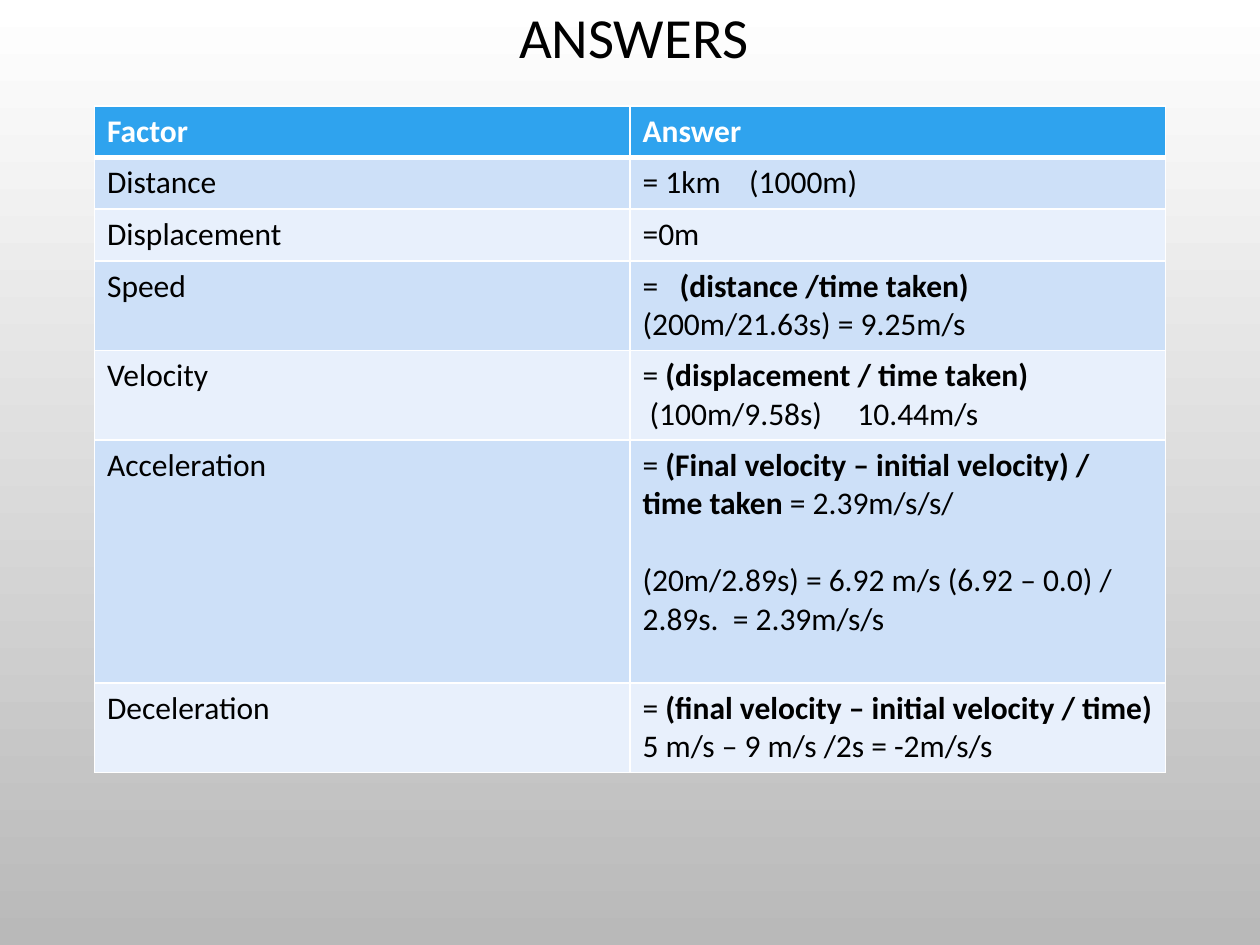
from lxml import etree
from pptx import Presentation
from pptx.dml.color import RGBColor
from pptx.enum.text import MSO_ANCHOR, MSO_AUTO_SIZE, PP_ALIGN
from pptx.oxml.ns import qn
from pptx.util import Inches, Pt

COLORS = {"black": "000000", "white": "FFFFFF", "grey": "B9B9B9",
          "header": "2FA3EE", "odd": "CDE0F8", "even": "E8F0FC"}
FONT = "Calibri"


def style_run(r, size, color, bold=False):
    r.font.name = FONT
    r.font.size = Pt(size)
    r.font.bold = bold
    r.font.color.rgb = RGBColor.from_string(COLORS[color])


def add_border(cell, side, width):
    ln = etree.SubElement(cell._tc.get_or_add_tcPr(), qn(f"a:ln{side}"), w=str(Pt(width)))
    fill = etree.SubElement(ln, qn("a:solidFill"))
    etree.SubElement(fill, qn("a:srgbClr"), val=COLORS["white"])


prs = Presentation()
prs.slide_width, prs.slide_height = Inches(10), Inches(7.5)
s = prs.slides.add_slide(prs.slide_layouts[5])

bg = s.background.fill
bg.gradient()
bg.gradient_angle = 270
for stop, color, position in zip(bg.gradient_stops, ("white", "grey"), (0, 1)):
    stop.color.rgb = RGBColor.from_string(COLORS[color])
    stop.position = position

title = s.shapes.title
title.left, title.top, title.width, title.height = Inches(0.83), Inches(0), Inches(8.5), Inches(0.63)
tf = title.text_frame
tf.text = "ANSWERS "
tf.auto_size = MSO_AUTO_SIZE.NONE
tf.vertical_anchor = MSO_ANCHOR.MIDDLE
p = tf.paragraphs[0]
p.alignment = PP_ALIGN.CENTER
p.line_spacing = 0.9
style_run(p.runs[0], 32.4, "black")

# each answer: paragraphs of (text, bold) runs
rows = [
    ("Factor", 0.41, [[("Answer", True)]]),
    ("Distance", 0.41, [[("= 1km    (1000m)", False)]]),
    ("Displacement", 0.41, [[("=0m", False)]]),
    ("Speed", 0.71, [[("=   ", False), ("(distance /time taken)", True)],
                     [("(200m/21.63s) = 9.25m/s", False)]]),
    ("Velocity", 0.71, [[("= ", False), ("(displacement / time taken)", True)],
                        [(" (100m/9.58s)     10.44m/s", False)]]),
    ("Acceleration", 1.93, [[("= ", False),
                             ("(Final velocity – initial velocity) / time taken ", True),
                             ("= 2.39m/s/s/", False)],
                            [("(20m/2.89s) = 6.92 m/s (6.92 – 0.0) / 2.89s.  = 2.39m/s/s", False)]]),
    ("Deceleration", 0.71, [[("= ", False), ("(final velocity – initial velocity / time)", True)],
                            [("5 m/s – 9 m/s /2s = -2m/s/s", False)]]),
]

table = s.shapes.add_table(len(rows), 2, Inches(0.75), Inches(0.84), Inches(8.5),
                           Inches(sum(height for _, height, _ in rows))).table
for i, (factor, height, answer) in enumerate(rows):
    table.rows[i].height = Inches(height)
    band = "header" if i == 0 else "odd" if i % 2 else "even"
    for cell, paragraphs in zip(table.rows[i].cells, ([[(factor, i == 0)]], answer)):
        for side in "LRTB":
            heavy = (i, side) in ((0, "B"), (1, "T"))
            add_border(cell, side, 3 if heavy else 1)
        cell.fill.solid()
        cell.fill.fore_color.rgb = RGBColor.from_string(COLORS[band])
        tf = cell.text_frame
        for n, runs in enumerate(paragraphs):
            p = tf.add_paragraph() if n else tf.paragraphs[0]
            if n and factor == "Acceleration":
                p.space_before = Pt(22)
            for text, bold in runs:
                r = p.add_run()
                r.text = text
                style_run(r, 18, "black" if i else "white", bold)

prs.save("out.pptx")
